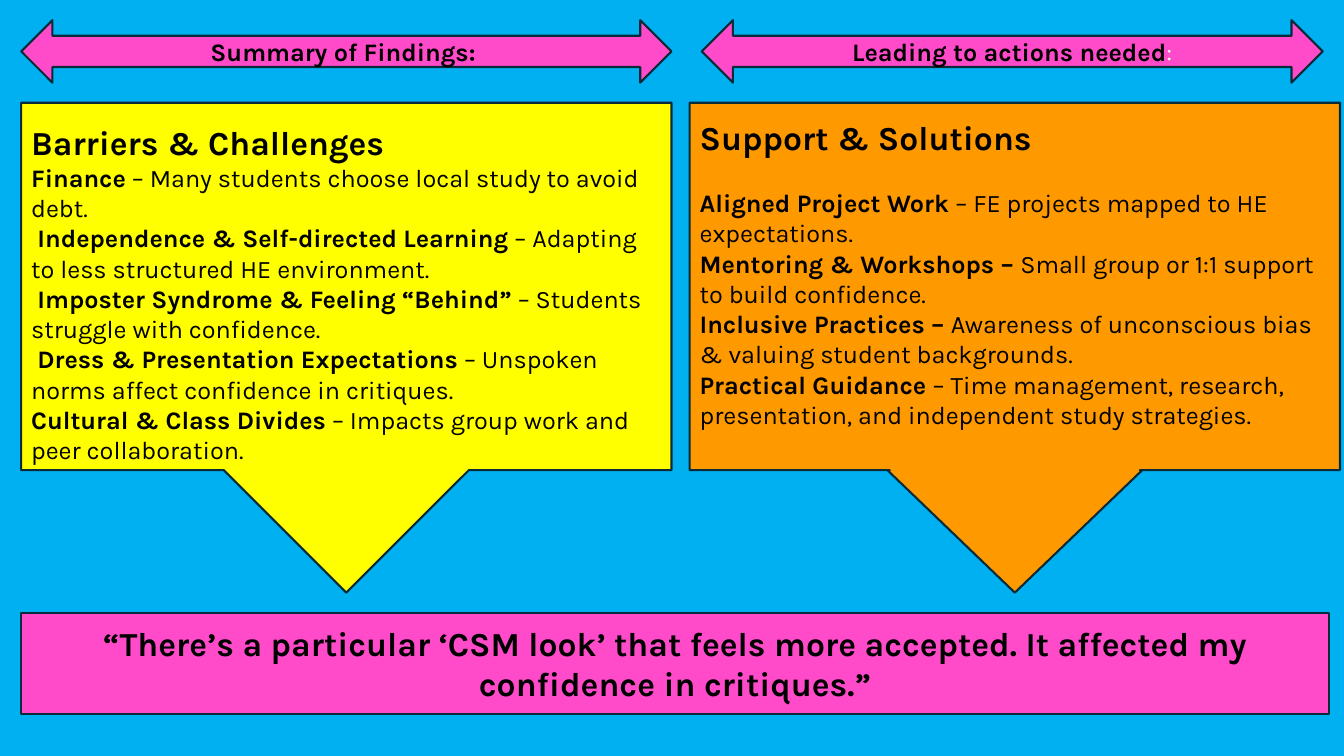
from dataclasses import dataclass

from pptx import Presentation
from pptx.dml.color import RGBColor
from pptx.enum.shapes import MSO_SHAPE
from pptx.enum.text import MSO_ANCHOR, PP_ALIGN
from pptx.util import Inches, Pt


@dataclass(frozen=True)
class Theme:
    font: str = "Karla"
    sky: str = "00B0F0"
    pink: str = "FF4BCA"
    yellow: str = "FFFF00"
    orange: str = "FF9900"
    edge: str = "092A39"
    ink: str = "000000"
    white: str = "FFFFFF"
    head: int = 24
    body: int = 18
    line: float = 1.5


class Board:
    def __init__(self, slide, theme):
        self.slide = slide
        self.theme = theme
        fill = slide.background.fill
        fill.solid()
        fill.fore_color.rgb = RGBColor.from_string(theme.sky)

    def shape(self, kind, box, color):
        shape = self.slide.shapes.add_shape(kind, *map(Inches, box))
        shape.shadow.inherit = False
        shape.fill.solid()
        shape.fill.fore_color.rgb = RGBColor.from_string(color)
        shape.line.color.rgb = RGBColor.from_string(self.theme.edge)
        shape.line.width = Pt(self.theme.line)
        shape.text_frame.word_wrap = True
        return shape

    def add_text(self, para, text, size, bold=True, color=None):
        run = para.add_run()
        run.text = text
        font = run.font
        font.name, font.size, font.bold = self.theme.font, Pt(size), bold
        font.color.rgb = RGBColor.from_string(color or self.theme.ink)

    def label(self, kind, box, text, size):
        """Pink shape with centred bold text; returns its paragraph."""
        frame = self.shape(kind, box, self.theme.pink).text_frame
        frame.vertical_anchor = MSO_ANCHOR.MIDDLE
        para = frame.paragraphs[0]
        para.alignment = PP_ALIGN.CENTER
        self.add_text(para, text, size)
        return para

    def callout(self, left, color, arrow, title, points, top, gap):
        """Down-arrow callout with a heading and bold-led points."""
        shape = self.shape(MSO_SHAPE.DOWN_ARROW_CALLOUT,
                           (left, 1.02, 6.45, 4.86), color)
        for i, value in enumerate(arrow):
            shape.adjustments[i] = value
        frame = shape.text_frame
        frame.vertical_anchor = MSO_ANCHOR.TOP
        frame.margin_top = Inches(top)
        para = frame.paragraphs[0]
        para.alignment = PP_ALIGN.LEFT
        para.space_after = Pt(gap)
        self.add_text(para, title, self.theme.head)
        for lead, rest in points:
            para = frame.add_paragraph()
            para.alignment = PP_ALIGN.LEFT
            self.add_text(para, lead, self.theme.body)
            self.add_text(para, rest, self.theme.body, bold=False)


BARRIERS = [
    ("Finance", " – Many students choose local study to avoid debt."),
    (" Independence & Self-directed Learning",
     " – Adapting to less structured HE environment."),
    (" Imposter Syndrome & Feeling “Behind”",
     " – Students struggle with confidence."),
    (" Dress & Presentation Expectations",
     " – Unspoken norms affect confidence in critiques."),
    ("Cultural & Class Divides",
     " – Impacts group work and peer collaboration."),
]
SUPPORT = [
    ("Aligned Project Work ", "– FE projects mapped to HE expectations."),
    ("Mentoring & Workshops – ",
     "Small group or 1:1 support to build confidence."),
    ("Inclusive Practices – ",
     "Awareness of unconscious bias & valuing student backgrounds."),
    ("Practical Guidance ",
     "– Time management, research, presentation, and independent "
     "study strategies."),
]
QUOTE = ("“There’s a particular ‘CSM look’ that feels more accepted. "
         "It affected my confidence in critiques.”")


def main():
    deck = Presentation()
    deck.slide_width, deck.slide_height = Inches(13.33), Inches(7.5)
    theme = Theme()
    board = Board(deck.slides.add_slide(deck.slide_layouts[6]), theme)

    # Callouts
    board.callout(0.21, theme.yellow, (0.5, 0.25, 0.25, 0.75),
                  "Barriers & Challenges", BARRIERS, top=0.19, gap=0)
    board.callout(6.84, theme.orange, (0.51, 0.26, 0.25, 0.75),
                  "Support & Solutions", SUPPORT, top=0.14, gap=21.6)

    # Quote band
    board.label(MSO_SHAPE.RECTANGLE, (0.21, 6.08, 12.97, 1), QUOTE, theme.head)

    # Header arrows
    arrow = MSO_SHAPE.LEFT_RIGHT_ARROW
    board.label(arrow, (0.21, 0.2, 6.45, 0.62),
                "Summary of Findings: ", theme.body)
    para = board.label(arrow, (6.96, 0.2, 6.16, 0.62),
                       "Leading to actions needed", theme.body)
    board.add_text(para, ":", theme.body, bold=False, color=theme.white)

    deck.save("out.pptx")


if __name__ == "__main__":
    main()
